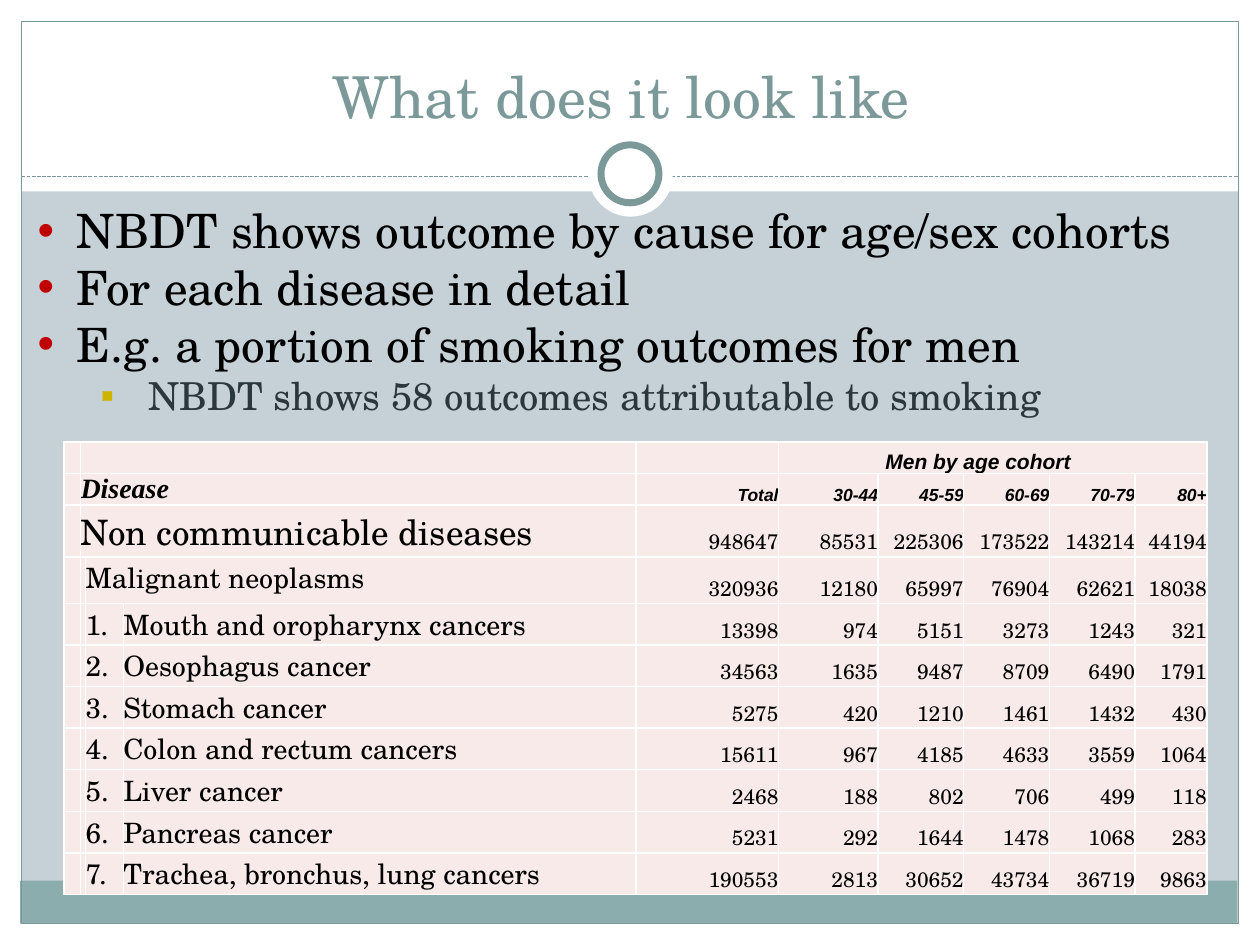
import lxml.etree
import pptx
import pptx.dml.color
import pptx.enum.dml
import pptx.enum.shapes
import pptx.enum.text
import pptx.oxml.ns
import pptx.util

Inches = pptx.util.Inches
Pt = pptx.util.Pt
qn = pptx.oxml.ns.qn
Kind = pptx.enum.shapes.MSO_SHAPE
Align = pptx.enum.text.PP_ALIGN
Anchor = pptx.enum.text.MSO_ANCHOR

SERIF = "TeX Gyre Schola"
WHITE, TEAL, ROSE, BLACK = "FFFFFF", "7C999A", "F7EAE9", "000000"
COLS = [0.13, 0.03, 0.3, 4.07, 1.13, 0.79, 0.68, 0.68, 0.68, 0.57]
ROWS = [0.25, 0.25, 0.41, 0.37] + [0.33] * 7
HEADS = ["Total", "30-44", "45-59", "60-69", "70-79", "80+"]
DATA = [
    ("Non communicable diseases", [948647, 85531, 225306, 173522, 143214, 44194]),
    ("Malignant neoplasms", [320936, 12180, 65997, 76904, 62621, 18038]),
    ("Mouth and oropharynx cancers", [13398, 974, 5151, 3273, 1243, 321]),
    ("Oesophagus cancer", [34563, 1635, 9487, 8709, 6490, 1791]),
    ("Stomach cancer", [5275, 420, 1210, 1461, 1432, 430]),
    ("Colon and rectum cancers", [15611, 967, 4185, 4633, 3559, 1064]),
    ("Liver cancer", [2468, 188, 802, 706, 499, 118]),
    ("Pancreas cancer", [5231, 292, 1644, 1478, 1068, 283]),
    ("Trachea, bronchus, lung cancers", [190553, 2813, 30652, 43734, 36719, 9863]),
]
POINTS = [
    "NBDT shows outcome by cause for age/sex cohorts",
    "For each disease in detail",
    "E.g. a portion of smoking outcomes for men",
]
NUM = {"size": Pt(12), "name": SERIF}
ITEM = {"size": Pt(16), "name": SERIF}
HEAD = {"size": Pt(10), "name": "Arial", "bold": True, "italic": True}


def tint(code):
    """Turn a hex string into a colour."""
    return pptx.dml.color.RGBColor.from_string(code)


def assign(item, values):
    """Set attributes from a dict."""
    for key, value in values.items():
        setattr(item, key, value)


def write(para, text, look, color=BLACK):
    """Add one formatted run to a paragraph."""
    run = para.add_run()
    run.text = text
    assign(run.font, look)
    run.font.color.rgb = tint(color)


def draw(slide, kind, box, fill=None, line=None, width=0.75):
    """Add a plain shape with optional fill and line."""
    shape = slide.shapes.add_shape(kind, *map(Inches, box))
    shape.shadow.inherit = False
    if fill:
        shape.fill.solid()
        shape.fill.fore_color.rgb = tint(fill)
    else:
        shape.fill.background()
    if line:
        shape.line.color.rgb = tint(line)
        shape.line.width = Pt(width)
    else:
        shape.line.fill.background()


def rule(slide, left, right, top):
    """Add the dashed line under the title."""
    ends = map(Inches, (left, top, right, top))
    line = slide.shapes.add_connector(pptx.enum.shapes.MSO_CONNECTOR.STRAIGHT, *ends)
    line.line.color.rgb = tint(TEAL)
    assign(line.line, {"width": Pt(0.75), "dash_style": pptx.enum.dml.MSO_LINE.SQUARE_DOT})
    lxml.etree.SubElement(line._element.spPr, qn("a:effectLst"))


def frame(slide):
    """Draw the bands, border and ring around the content."""
    for box in [(0, 7.33, 10, 0.17), (0, 0, 10, 1.52), (0, 0, 0.17, 7.5), (9.83, 0, 0.17, 7.5)]:
        draw(slide, Kind.RECTANGLE, box, WHITE)
    draw(slide, Kind.RECTANGLE, (0.16, 6.99, 9.66, 0.34), "8CADAE")
    draw(slide, Kind.RECTANGLE, (0.17, 0.17, 9.66, 7.16), None, TEAL)
    rule(slide, 0.17, 9.83, 1.4)
    draw(slide, Kind.OVAL, (4.67, 1.05, 0.67, 0.67), WHITE)
    draw(slide, Kind.OVAL, (4.77, 1.15, 0.46, 0.46), WHITE, TEAL, 4)


def head(slide, text):
    """Place the title above the frame shapes."""
    title = slide.shapes.title
    slide.shapes._spTree.append(title._element)
    assign(title, {"left": Inches(0.33), "top": Inches(0.25),
                   "width": Inches(9.33), "height": Inches(0.83)})
    title.text_frame.vertical_anchor = Anchor.BOTTOM
    para = title.text_frame.paragraphs[0]
    para.alignment = Align.CENTER
    write(para, text, {"size": Pt(33), "name": SERIF}, TEAL)


def bullet(para, mark, color, left, hang):
    """Give a paragraph a coloured bullet and hanging indent."""
    props = para._p.get_or_add_pPr()
    props.set("marL", str(Inches(left)))
    props.set("indent", str(-Inches(hang)))
    paint = lxml.etree.SubElement(props, qn("a:buClr"))
    lxml.etree.SubElement(paint, qn("a:srgbClr"), val=color)
    lxml.etree.SubElement(props, qn("a:buFont"), typeface="Arial")
    lxml.etree.SubElement(props, qn("a:buChar"), char=mark)


def body(slide):
    """Add the bulleted text."""
    box = slide.shapes.add_textbox(*map(Inches, (0.2, 1.55, 9.53, 1.83)))
    text = box.text_frame
    text.word_wrap = True
    para = text.paragraphs[0]
    for point in POINTS:
        write(para, point, {"size": Pt(27), "name": SERIF})
        bullet(para, "•", "C00000", 0.31, 0.31)
        para = text.add_paragraph()
    para.level = 1
    write(para, "NBDT shows 58 outcomes attributable to smoking",
          {"size": Pt(22), "name": SERIF}, "2A373D")
    bullet(para, "▪", "CCB400", 0.88, 0.38)


def style(cell):
    """Give a cell its fill, white borders and zero margins."""
    assign(cell, dict.fromkeys(
        ["margin_left", "margin_right", "margin_top", "margin_bottom"], 0))
    props = cell._tc.get_or_add_tcPr()
    for side in ["lnL", "lnR", "lnT", "lnB"]:
        edge = lxml.etree.SubElement(props, qn("a:" + side), w=str(Pt(1)))
        paint = lxml.etree.SubElement(edge, qn("a:solidFill"))
        lxml.etree.SubElement(paint, qn("a:srgbClr"), val=WHITE)
    cell.fill.solid()
    cell.fill.fore_color.rgb = tint(ROSE)
    lxml.etree.SubElement(cell.text_frame.paragraphs[0]._p, qn("a:endParaRPr"), sz="1000")


def put(cell, text, look, align=Align.LEFT, space=0):
    """Write a cell; labels sit at the top, the rest at the bottom."""
    cell.vertical_anchor = Anchor.TOP if align == Align.LEFT else Anchor.BOTTOM
    para = cell.text_frame.paragraphs[0]
    assign(para, {"alignment": align, "space_before": Pt(space)})
    write(para, text, look)


def grid(slide):
    """Build the table of outcomes."""
    box = map(Inches, (0.51, 3.51, sum(COLS), sum(ROWS)))
    table = slide.shapes.add_table(len(ROWS), len(COLS), *box).table
    assign(table, {"first_row": False, "horz_banding": False})
    for col, width in zip(table.columns, COLS):
        col.width = Inches(width)
    for row, height in zip(table.rows, ROWS):
        row.height = Inches(height)
    for cell in table.iter_cells():
        style(cell)
    for row, left, right in [(0, 1, 3), (0, 5, 9), (1, 1, 3), (2, 1, 3), (3, 2, 3)]:
        table.cell(row, left).merge(table.cell(row, right))
    band = table.cell(0, 5)
    put(band, "Men by age cohort", {**HEAD, "size": Pt(12)}, Align.CENTER)
    band.margin_right = Inches(0.23)
    put(table.cell(1, 1), "Disease", {**HEAD, "size": Pt(16), "name": "Times New Roman"})
    for col, text in enumerate(HEADS, 4):
        put(table.cell(1, col), text, HEAD, Align.RIGHT)
    for row, (name, values) in enumerate(DATA, 2):
        if row > 3:
            put(table.cell(row, 2), f"{row - 3}.", ITEM, space=3)
        look = {**ITEM, "size": Pt(20)} if row == 2 else ITEM
        put(table.cell(row, min(row - 1, 3)), name, look, space=3)
        for col, value in enumerate(values, 4):
            put(table.cell(row, col), str(value), NUM, Align.RIGHT)


def main():
    """Build and save the slide."""
    deck = pptx.Presentation()
    assign(deck, {"slide_width": Inches(10), "slide_height": Inches(7.5)})
    slide = deck.slides.add_slide(deck.slide_layouts[5])
    slide.background.fill.solid()
    slide.background.fill.fore_color.rgb = tint("C5D1D7")
    frame(slide)
    head(slide, "What does it look like ")
    grid(slide)
    body(slide)
    deck.save("out.pptx")


if __name__ == "__main__":
    main()
